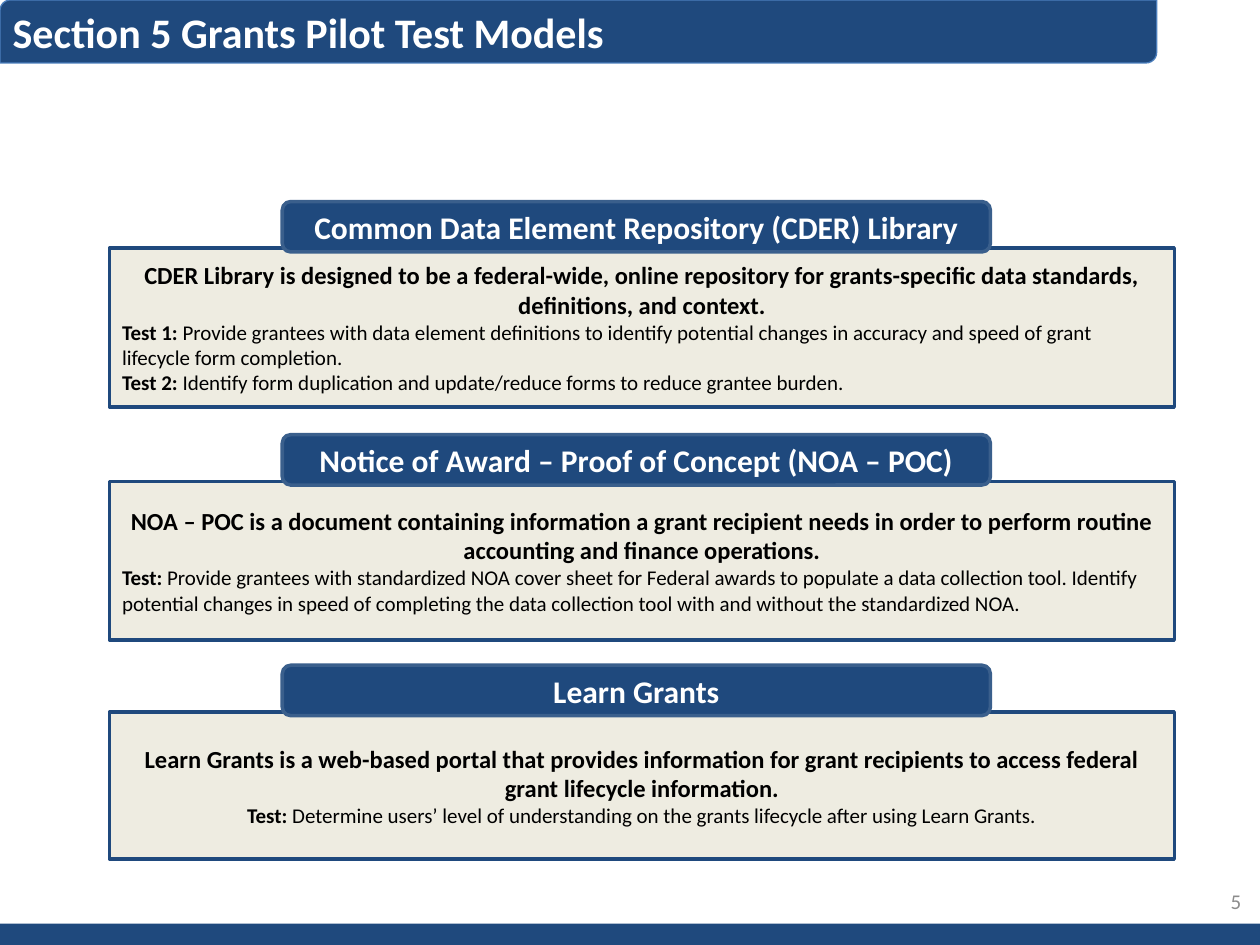
import pptx
import pptx.util
import pptx.dml.color
import pptx.enum.shapes
import pptx.enum.text

Inches = pptx.util.Inches
Pt = pptx.util.Pt
SHAPE = pptx.enum.shapes.MSO_SHAPE
ALIGN = pptx.enum.text.PP_ALIGN
ANCHOR = pptx.enum.text.MSO_ANCHOR

COLORS = {
    "navy": "1F497D", "banner_line": "4B7EBC", "header_line": "3A5F8C",
    "cream": "EEECE1", "black": "000000", "white": "FFFFFF", "gray": "8C8C8C",
}
FONT = "Calibri"
TITLE = "Section 5 Grants Pilot Test Models"
PAGE_NUMBER = "5"

# Each model: header, header top, panel height, test alignment, summary, tests
MODELS = [
    ("Common Data Element Repository (CDER) Library", 1.6, 1.26, ALIGN.LEFT,
     "CDER Library is designed to be a federal-wide, online repository for "
     "grants-specific data standards, definitions, and context.",
     [("Test 1: ", "Provide grantees with data element definitions to identify potential "
       "changes in accuracy and speed of grant lifecycle form completion."),
      ("Test 2: ", "Identify form duplication and update/reduce forms to reduce "
       "grantee burden.")]),
    ("Notice of Award – Proof of Concept (NOA – POC)", 3.45, 1.26, ALIGN.LEFT,
     "NOA – POC is a document containing information a grant recipient needs in order "
     "to perform routine accounting and finance operations.",
     [("Test: ", "Provide grantees with standardized NOA cover sheet for Federal awards to "
       "populate a data collection tool. Identify potential changes in speed of completing "
       "the data collection tool with and without the standardized NOA.")]),
    ("Learn Grants", 5.28, 1.17, ALIGN.CENTER,
     "Learn Grants is a web-based portal that provides information for grant recipients "
     "to access federal grant lifecycle information.",
     [("Test: ", "Determine users’ level of understanding on the grants lifecycle after "
       "using Learn Grants.")]),
]
PANEL_LEFT, PANEL_WIDTH, PANEL_OFFSET = 0.87, 8.45, 0.37
HEADER_LEFT, HEADER_WIDTH, HEADER_HEIGHT = 2.24, 5.62, 0.4


def rgb(name):
    return pptx.dml.color.RGBColor.from_string(COLORS[name])


def add_box(slide, kind, left, top, width, height, fill, line=None, line_width=2):
    shape = slide.shapes.add_shape(
        kind, Inches(left), Inches(top), Inches(width), Inches(height))
    shape.shadow.inherit = False
    shape.fill.solid()
    shape.fill.fore_color.rgb = rgb(fill)
    if line:
        shape.line.color.rgb = rgb(line)
        shape.line.width = Pt(line_width)
    else:
        shape.line.fill.background()
    return shape


def write(paragraph, parts, size, color, align):
    """Fill a paragraph with (text, bold) parts."""
    paragraph.alignment = align
    for text, bold in parts:
        run = paragraph.add_run()
        run.text = text
        run.font.name = FONT
        run.font.size = Pt(size)
        run.font.bold = bold
        run.font.color.rgb = rgb(color)


def set_frame(shape, anchor):
    frame = shape.text_frame
    frame.word_wrap = True
    frame.auto_size = pptx.enum.text.MSO_AUTO_SIZE.NONE
    frame.vertical_anchor = anchor
    return frame


def add_panel(slide, model):
    _, top, height, align, summary, tests = model
    panel = add_box(slide, SHAPE.RECTANGLE, PANEL_LEFT, top + PANEL_OFFSET,
                    PANEL_WIDTH, height, "cream", "navy")
    frame = set_frame(panel, ANCHOR.MIDDLE)
    write(frame.paragraphs[0], [(summary, True)], 14, "black", ALIGN.CENTER)
    for label, detail in tests:
        write(frame.add_paragraph(), [(label, True), (detail, False)], 12, "black", align)


def add_header(slide, model):
    header = add_box(slide, SHAPE.ROUNDED_RECTANGLE, HEADER_LEFT, model[1],
                     HEADER_WIDTH, HEADER_HEIGHT, "navy", "header_line")
    frame = set_frame(header, ANCHOR.MIDDLE)
    write(frame.paragraphs[0], [(model[0], True)], 18, "white", ALIGN.CENTER)


def main():
    presentation = pptx.Presentation()
    presentation.slide_width = Inches(10)
    presentation.slide_height = Inches(7.5)
    slide = presentation.slides.add_slide(presentation.slide_layouts[5])

    # Footer bar and title banner
    add_box(slide, SHAPE.RECTANGLE, 0, 7.33, 10, 0.17, "navy")
    add_box(slide, SHAPE.ROUND_2_DIAG_RECTANGLE, 0, 0, 9.18, 0.5,
            "navy", "banner_line", 0.75)

    # Pilot test models, headers overlapping their panels
    for model in MODELS:
        add_panel(slide, model)
        add_header(slide, model)

    # Title, brought in front of the banner
    title = slide.shapes.title
    title.left, title.top = Inches(0), Inches(0)
    title.width, title.height = Inches(8.5), Inches(0.5)
    frame = set_frame(title, ANCHOR.TOP)
    write(frame.paragraphs[0], [(TITLE, True)], 24, "white", ALIGN.LEFT)
    slide.shapes._spTree.append(title._element)

    # Page number
    number = slide.shapes.add_textbox(Inches(7.62), Inches(6.95), Inches(2.33), Inches(0.4))
    frame = set_frame(number, ANCHOR.MIDDLE)
    write(frame.paragraphs[0], [(PAGE_NUMBER, False)], 12, "gray", ALIGN.RIGHT)

    presentation.save("out.pptx")


if __name__ == "__main__":
    main()
